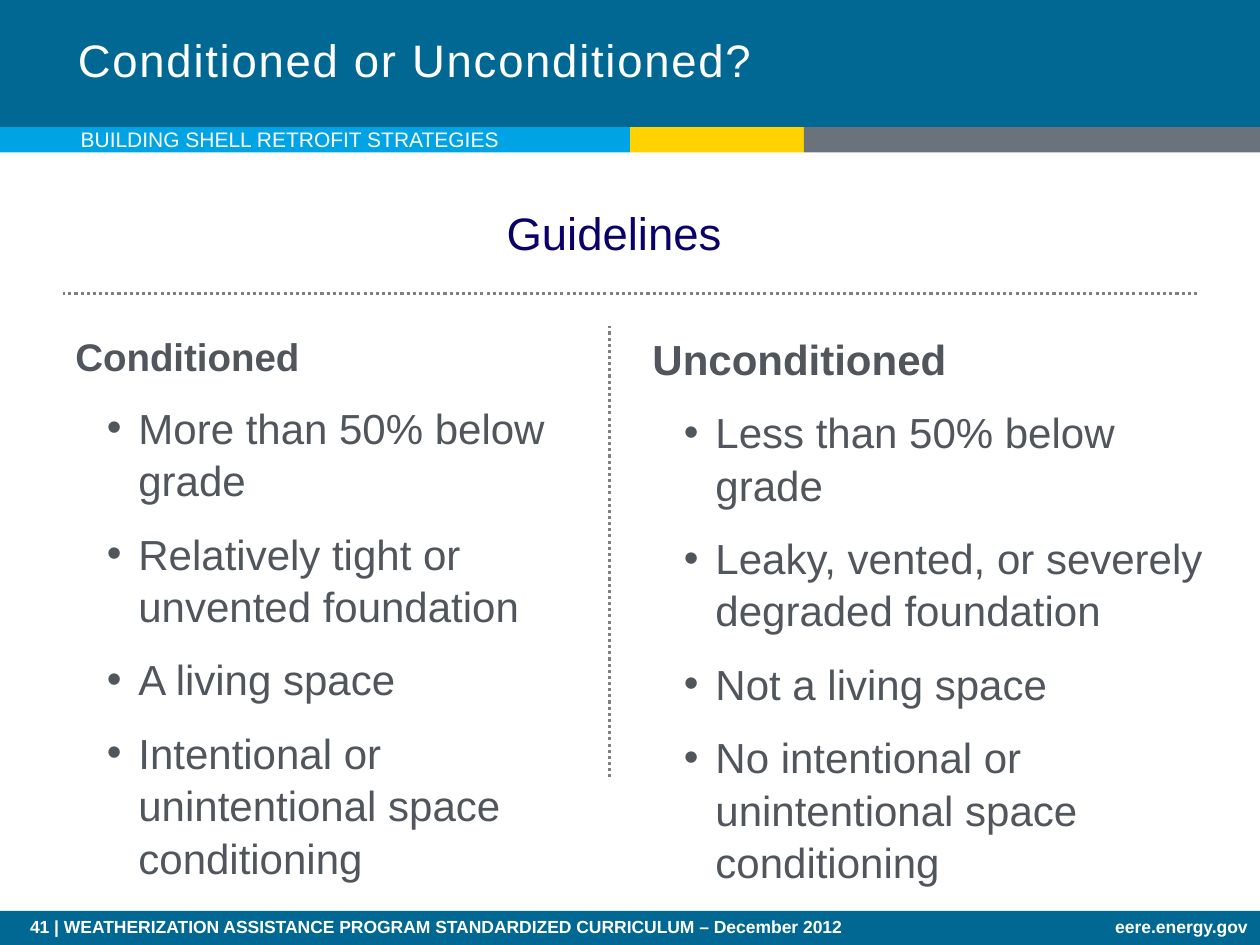
from lxml import etree
from pptx import Presentation
from pptx.dml.color import RGBColor
from pptx.enum.dml import MSO_LINE
from pptx.enum.shapes import MSO_CONNECTOR, MSO_SHAPE
from pptx.enum.text import MSO_ANCHOR, PP_ALIGN
from pptx.oxml.ns import qn
from pptx.util import Inches, Pt

RECT = MSO_SHAPE.RECTANGLE
LINE = MSO_CONNECTOR.STRAIGHT
DOTS = MSO_LINE.ROUND_DOT  # sysDot
TOP, MID = MSO_ANCHOR.TOP, MSO_ANCHOR.MIDDLE
LEFT, CENTER, RIGHT = PP_ALIGN.LEFT, PP_ALIGN.CENTER, PP_ALIGN.RIGHT

WIDE, HIGH = Inches(10), Inches(7.5)
COLS, ROWS = 100, 75
FONT = "Arial"
HEX = {
    "white": "FFFFFF", "teal": "006892", "sky": "00A4E4", "gold": "FFD200",
    "slate": "6A737B", "body": "50565C", "navy": "0A006A", "rule": "808080",
}

# Left column, width and colour of each part of the stripe
BANDS = [(0, 50, "sky"), (50, 13.8, "gold"), (63.8, 36.2, "slate")]

# Grid box, heading, heading size and points of each list
LISTS = [
    ((5, 25.8, 40.8, 43.3), "Conditioned", 22, [
        "More than 50% below grade",
        "Relatively tight or \nunvented foundation",
        "A living space",
        "Intentional or unintentional space conditioning",
    ]),
    ((50.8, 25.8, 45.8, 43.3), "Unconditioned", 24, [
        "Less than 50% below grade",
        "Leaky, vented, or severely degraded foundation",
        "Not a living space",
        "No intentional or unintentional space conditioning",
    ]),
]


def grid(*nums):
    """Turn column, row pairs into slide lengths."""
    return [round(n * (HIGH / ROWS if i % 2 else WIDE / COLS))
            for i, n in enumerate(nums)]


def tint(name):
    return RGBColor.from_string(HEX[name])


def add_bar(slide, box, color):
    bar = slide.shapes.add_shape(RECT, *grid(*box))
    bar.shadow.inherit = False
    bar.fill.solid()
    bar.fill.fore_color.rgb = tint(color)
    bar.line.fill.background()


def add_rule(slide, ends):
    rule = slide.shapes.add_connector(LINE, *grid(*ends))
    rule.line.color.rgb = tint("rule")
    rule.line.width = Pt(1.75)
    rule.line.dash_style = DOTS
    etree.SubElement(rule.line._get_or_add_ln().getparent(), qn("a:effectLst"))


def add_frame(slide, box, anchor=TOP):
    frame = slide.shapes.add_textbox(*grid(*box)).text_frame
    frame.word_wrap = True
    frame.vertical_anchor = anchor
    return frame


def add_run(para, text, size, color, bold=False):
    run = para.add_run()
    run.text = text
    font = run.font
    font.name, font.size, font.bold = FONT, Pt(size), bold
    font.color.rgb = tint(color)
    return run


def add_label(slide, box, text, size, color="white", bold=False,
              align=LEFT, anchor=TOP, lead=None):
    frame = add_frame(slide, box, anchor)
    para = frame.paragraphs[0]
    para.alignment = align
    para.line_spacing = lead
    return frame, add_run(para, text, size, color, bold)


def add_point(frame, text):
    para = frame.add_paragraph()
    props = para._p.get_or_add_pPr()
    props.set("marL", str(Inches(0.5)))
    props.set("indent", str(Inches(-0.25)))
    etree.SubElement(props, qn("a:buFont"), typeface=FONT)
    etree.SubElement(props, qn("a:buChar"), char="•")
    para.space_before = para.space_after = Pt(6)
    para.line_spacing = 1.04
    for i, part in enumerate(text.split("\n")):
        if i:
            para.add_line_break()
        add_run(para, part, 24, "body")


def add_list(slide, box, head, size, points):
    frame = add_frame(slide, box)
    para = frame.paragraphs[0]
    para.space_after = Pt(6)
    para.line_spacing = 1.04
    add_run(para, head, size, "body", True)
    for text in points:
        add_point(frame, text)


def main():
    deck = Presentation()
    deck.slide_width, deck.slide_height = WIDE, HIGH
    slide = deck.slides.add_slide(deck.slide_layouts[6])

    # Header, footer and stripe
    add_bar(slide, (0, 0, COLS, 10.1), "teal")
    add_bar(slide, (0, 72.3, COLS, 2.7), "teal")
    for left, width, color in BANDS:
        add_bar(slide, (left, 10.1, width, 2), color)

    # Footer text
    add_label(slide, (1.4, 72.4, 79.7, 2.6),
              "41 | WEATHERIZATION ASSISTANCE PROGRAM STANDARDIZED "
              "CURRICULUM – December 2012", 10, bold=True, lead=0.9)
    add_label(slide, (59.9, 72.4, 40.1, 2.6), "eere.energy.gov", 10,
              bold=True, align=RIGHT, lead=0.9)

    # Title, section name and subtitle
    _, title = add_label(slide, (5.2, 0, 58.7, 9.9),
                         "Conditioned or Unconditioned?", 26,
                         anchor=MID, lead=Pt(28))
    title.font._element.set("spc", "100")
    frame, _ = add_label(slide, (6.4, 9.8, 69.2, 2.5),
                         "BUILDING SHELL RETROFIT STRATEGIES", 12, anchor=MID)
    frame.margin_left = frame.margin_right = 0
    frame.margin_top = frame.margin_bottom = 0
    add_label(slide, (22.5, 15.8, 52.5, 5.4), "Guidelines", 26, "navy",
              align=CENTER)

    # Two lists and the dotted rules around them
    for item in LISTS:
        add_list(slide, *item)
    add_rule(slide, (48.4, 61.7, 48.4, 25.9))
    add_rule(slide, (95, 23.3, 5, 23.3))

    deck.save("out.pptx")


if __name__ == "__main__":
    main()
